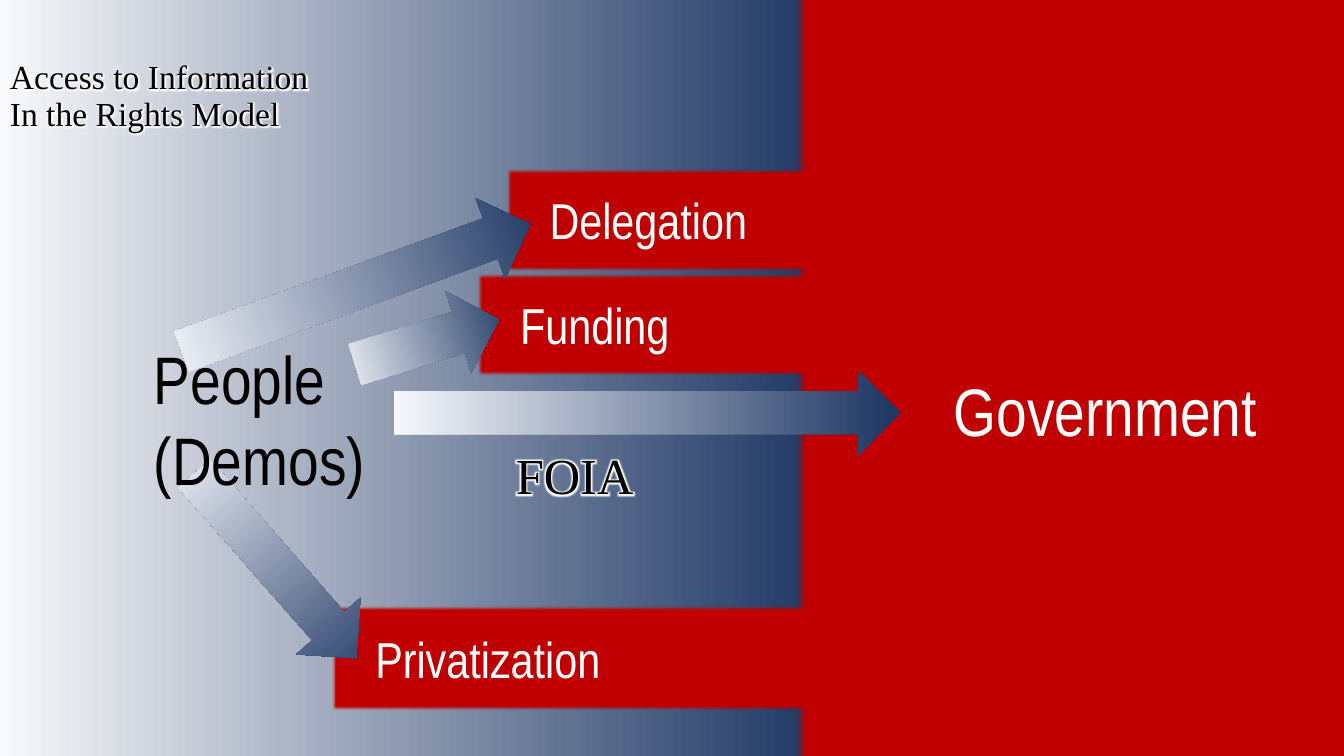
"""Build the slide on access to information in the rights model."""
from dataclasses import dataclass

import lxml.etree
import pptx
import pptx.dml.color
import pptx.enum.shapes
import pptx.enum.text
import pptx.oxml.ns
import pptx.util

Cm = pptx.util.Cm
Pt = pptx.util.Pt
Kind = pptx.enum.shapes.MSO_SHAPE
Align = pptx.enum.text.PP_ALIGN
Anchor = pptx.enum.text.MSO_ANCHOR
qn = pptx.oxml.ns.qn


@dataclass(frozen=True)
class Theme:
    """Colours, fonts and type sizes of the slide."""
    white: str = "FFFFFF"
    black: str = "000000"
    pale: str = "F6F8FC"
    navy: str = "203864"
    edge: str = "325491"
    red: str = "C00000"
    serif: str = "Times New Roman"
    narrow: str = "Arial Narrow"
    small: int = 24
    mid: int = 36
    large: int = 48


@dataclass(frozen=True)
class Box:
    """A place on the slide in centimetres."""
    left: float
    top: float
    width: float
    height: float


@dataclass(frozen=True)
class Panel:
    """A large backdrop with a plain or graded fill."""
    box: Box
    stops: tuple
    soft: float = 0


@dataclass(frozen=True)
class Bar:
    """A red bar with its label."""
    text: str
    left: float
    top: float
    width: float


@dataclass(frozen=True)
class Arrow:
    """A graded arrow with its turn in degrees."""
    left: float
    top: float
    width: float
    turn: float = 0


@dataclass(frozen=True)
class Label:
    """A free text with its style."""
    text: str
    box: Box
    font: str
    size: int
    tint: str
    align: Align = Align.LEFT
    anchor: Anchor = Anchor.TOP
    pitch: float = 1
    glow: float = 0


LOOK = Theme()
BAR_TALL = 2.64
ARROW_TALL = 2.16
PANELS = [
    Panel(Box(-0.64, -0.36, 21.26, 19.79), ((0, LOOK.white), (1, LOOK.navy))),
    Panel(Box(20.02, -0.48, 14.25, 19.89), ((0, LOOK.red),), 5),
]
MAIN = Arrow(9.93, 9.32, 12.78)
BARS = [
    Bar("Privatization", 8.36, 15.27, 22.17),
    Bar("Delegation", 12.75, 4.22, 9.93),
    Bar("Funding", 12.01, 6.86, 15.6),
]
ARROWS = [
    Arrow(4.29, 6.17, 9.37, 339.9),
    Arrow(8.86, 7.54, 3.81, 342.7),
    Arrow(3.84, 13.18, 6.2, 48.7),
]
LABELS = [
    Label("FOIA", Box(12.75, 11.07, 7.87, 1.8), LOOK.serif, LOOK.mid,
          LOOK.black, glow=5),
    Label("People\n(Demos)", Box(3.63, 8.38, 11.94, 4.37), LOOK.narrow,
          LOOK.large, LOOK.black),
    Label("Government", Box(22, 9.17, 9.93, 4.37), LOOK.narrow, LOOK.large,
          LOOK.white, align=Align.RIGHT),
    Label("Access to Information\nIn the Rights Model",
          Box(0, 0.61, 29.21, 3.68), LOOK.serif, LOOK.small, LOOK.black,
          anchor=Anchor.MIDDLE, pitch=0.9, glow=5),
]


def rgb(code: str) -> pptx.dml.color.RGBColor:
    """Turn a hex code into a colour."""
    return pptx.dml.color.RGBColor.from_string(code)


def place(box: Box) -> tuple:
    """Give the four lengths of a box."""
    return Cm(box.left), Cm(box.top), Cm(box.width), Cm(box.height)


def paint(shape, stops: tuple, angle: float = 0) -> None:
    """Fill a shape with one colour or a gradient."""
    if len(stops) == 1:
        shape.fill.solid()
        shape.fill.fore_color.rgb = rgb(stops[0][1])
        return
    shape.fill.gradient()
    shape.fill.gradient_angle = angle
    for stop, (spot, tint) in zip(shape.fill.gradient_stops, stops):
        stop.position = spot
        stop.color.rgb = rgb(tint)


def form(slide, kind: Kind, box: Box, stops: tuple, angle: float = 0,
         soft: float = 0):
    """Add a filled shape with no line, softened at the edge if asked."""
    shape = slide.shapes.add_shape(kind, *place(box))
    shape.shadow.inherit = False
    paint(shape, stops, angle)
    shape.line.fill.background()
    if soft:
        effects = shape._element.spPr.find(qn("a:effectLst"))
        lxml.etree.SubElement(effects, qn("a:softEdge"), rad=str(Pt(soft)))
    return shape


def shine(run, size: float) -> None:
    """Put a white glow around a run."""
    effects = lxml.etree.Element(qn("a:effectLst"))
    glow = lxml.etree.SubElement(effects, qn("a:glow"), rad=str(Pt(size)))
    lxml.etree.SubElement(glow, qn("a:srgbClr"), val=LOOK.white)
    run.font._element.find(qn("a:solidFill")).addnext(effects)


def style(frame, font: str, size: int, tint: str, align: Align = Align.LEFT,
          pitch: float = 1, glow: float = 0) -> None:
    """Format each line of a text frame."""
    for line in frame.paragraphs:
        line.alignment = align
        line.line_spacing = pitch
        for run in line.runs:
            run.font.name = font
            run.font.size = Pt(size)
            run.font.color.rgb = rgb(tint)
            if glow:
                shine(run, glow)


def draw_panel(slide, panel: Panel) -> None:
    """Draw a backdrop with a thin edge."""
    shape = form(slide, Kind.RECTANGLE, panel.box, panel.stops,
                 soft=panel.soft)
    shape.line.color.rgb = rgb(LOOK.edge)
    shape.line.width = Pt(1)


def draw_bar(slide, bar: Bar) -> None:
    """Draw a red bar and its label."""
    box = Box(bar.left, bar.top, bar.width, BAR_TALL)
    shape = form(slide, Kind.RECTANGLE, box, ((0, LOOK.red),), soft=2.5)
    frame = shape.text_frame
    frame.text = bar.text
    frame.vertical_anchor = Anchor.TOP
    frame.margin_left = Cm(1.1)
    frame.margin_top = Cm(0.55)
    style(frame, LOOK.narrow, LOOK.mid, LOOK.white)


def draw_arrow(slide, arrow: Arrow) -> None:
    """Draw an arrow that darkens toward its head."""
    box = Box(arrow.left, arrow.top, arrow.width, ARROW_TALL)
    stops = ((0.02, LOOK.navy), (1, LOOK.pale))
    form(slide, Kind.RIGHT_ARROW, box, stops, 180).rotation = arrow.turn


def draw_label(slide, label: Label) -> None:
    """Draw a free text."""
    frame = slide.shapes.add_textbox(*place(label.box)).text_frame
    frame.word_wrap = True
    frame.vertical_anchor = label.anchor
    frame.text = label.text
    style(frame, label.font, label.size, label.tint, label.align,
          label.pitch, label.glow)


def main() -> None:
    """Build and save the deck."""
    deck = pptx.Presentation()
    deck.slide_width, deck.slide_height = Cm(33.87), Cm(19.05)
    slide = deck.slides.add_slide(deck.slide_layouts[6])
    for panel in PANELS:
        draw_panel(slide, panel)
    draw_arrow(slide, MAIN)
    for bar in BARS:
        draw_bar(slide, bar)
    for arrow in ARROWS:
        draw_arrow(slide, arrow)
    for label in LABELS:
        draw_label(slide, label)
    deck.save("out.pptx")


if __name__ == "__main__":
    main()
